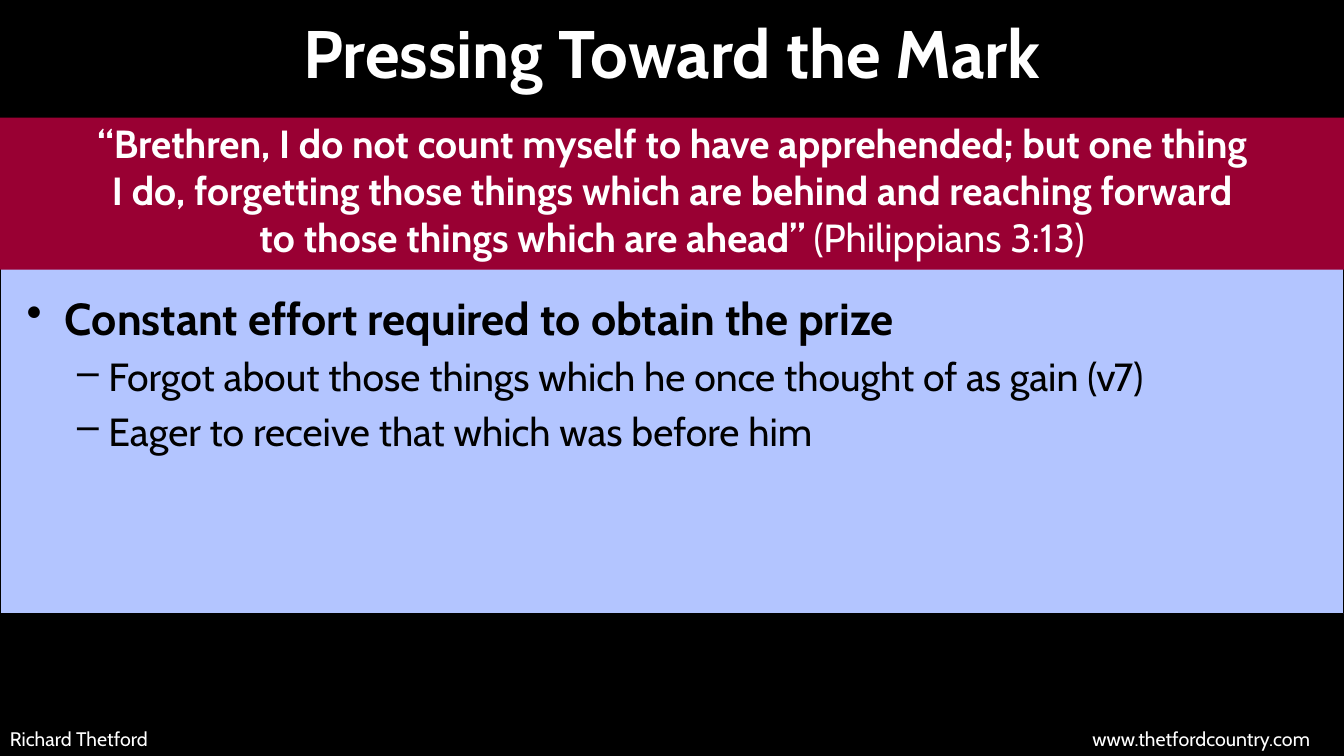
from lxml import etree
from pptx import Presentation
from pptx.dml.color import RGBColor
from pptx.enum.shapes import MSO_SHAPE
from pptx.enum.text import MSO_ANCHOR, MSO_AUTO_SIZE, PP_ALIGN
from pptx.oxml.ns import qn
from pptx.util import Inches, Pt

RECTANGLE = MSO_SHAPE.RECTANGLE
MIDDLE, TOP = MSO_ANCHOR.MIDDLE, MSO_ANCHOR.TOP
CENTER, LEFT = PP_ALIGN.CENTER, PP_ALIGN.LEFT
GROW, FIXED = MSO_AUTO_SIZE.SHAPE_TO_FIT_TEXT, MSO_AUTO_SIZE.NONE

COLUMNS, ROWS = 80, 45
CELL = Inches(7.5) // ROWS
FONT = "Cabin"
BLACK, WHITE, CRIMSON, PERIWINKLE = "000000", "FFFFFF", "990033", "B3C5FF"

QUOTE = [
    "“Brethren, I do not count myself to have apprehended; but one thing",
    "I do, forgetting those things which are behind and reaching forward",
    "to those things which are ahead” ",
]
POINTS = [
    ("Constant effort required to obtain the prize", 0),
    ("Forgot about those things which he once thought of as gain (v7)", 1),
    ("Eager to receive that which was before him", 1),
]
POINT_STYLES = [("•", 32, True, 0.38, 0.38), ("–", 28, False, 0.81, 0.31)]


def color(value):
    return RGBColor.from_string(value)


def grid(left, top, width, height):
    return [round(cells * CELL) for cells in (left, top, width, height)]


def add_span(para, text, size, ink=WHITE, bold=False):
    span = para.add_run()
    span.text = text
    span.font.name = FONT
    span.font.size = Pt(size)
    span.font.bold = bold
    span.font.color.rgb = color(ink)


def add_band(page, area, fill, outline=None):
    band = page.shapes.add_shape(RECTANGLE, *grid(*area))
    band.shadow.inherit = False
    band.fill.solid()
    band.fill.fore_color.rgb = color(fill)
    if outline:
        band.line.color.rgb = color(outline)
        band.line.width = Pt(0.75)
    else:
        band.line.fill.background()


def add_text_frame(page, area, fit=GROW):
    frame = page.shapes.add_textbox(*grid(*area)).text_frame
    frame.word_wrap = True
    frame.auto_size = fit
    frame.vertical_anchor = TOP
    return frame


def add_title(page, area, text):
    title = page.shapes.title
    title.left, title.top, title.width, title.height = grid(*area)
    frame = title.text_frame
    frame.auto_size = FIXED
    frame.vertical_anchor = MIDDLE
    para = frame.paragraphs[0]
    para.alignment = CENTER
    add_span(para, text, 48, bold=True)


def add_points(page, area):
    frame = add_text_frame(page, area, FIXED)
    for index, (text, level) in enumerate(POINTS):
        mark, size, bold, margin, hang = POINT_STYLES[level]
        para = frame.add_paragraph() if index else frame.paragraphs[0]
        para.level = level
        para.space_before = Pt(size * 0.2)
        add_span(para, text, size, BLACK, bold)
        settings = para._p.get_or_add_pPr()
        settings.set("marL", str(Inches(margin)))
        settings.set("indent", str(-Inches(hang)))
        etree.SubElement(settings, qn("a:buChar"), char=mark)


def add_quote(page, area, lines, reference):
    para = add_text_frame(page, area).paragraphs[0]
    para.alignment = CENTER
    for index, line in enumerate(lines):
        if index:
            para.add_line_break()
        add_span(para, line, 28, bold=True)
    add_span(para, reference, 28)


def add_footer(page, area, author, site):
    para = add_text_frame(page, area).paragraphs[0]
    para.alignment = LEFT
    add_span(para, f"{author}\t{site}", 14)
    tabs = etree.SubElement(para._p.get_or_add_pPr(), qn("a:tabLst"))
    etree.SubElement(tabs, qn("a:tab"), pos=str(Inches(12.9)), algn="r")


def main():
    deck = Presentation()
    deck.slide_width, deck.slide_height = COLUMNS * CELL, ROWS * CELL
    page = deck.slides.add_slide(deck.slide_layouts[5])
    page.background.fill.solid()
    page.background.fill.fore_color.rgb = color(BLACK)

    add_band(page, (0, 15.9, COLUMNS, 20.64), PERIWINKLE, BLACK)
    add_title(page, (13, 0.5, 54, 5.2), "Pressing Toward the Mark")
    add_points(page, (1, 17, 78, 19))
    add_band(page, (0, 7, COLUMNS, 9.06), CRIMSON)
    add_quote(page, (0, 6.8, COLUMNS, 9.06), QUOTE, "(Philippians 3:13)")
    add_footer(page, (0, 42.96, COLUMNS, 2.04),
               "Richard Thetford", "www.thetfordcountry.com")
    deck.save("out.pptx")


if __name__ == "__main__":
    main()
